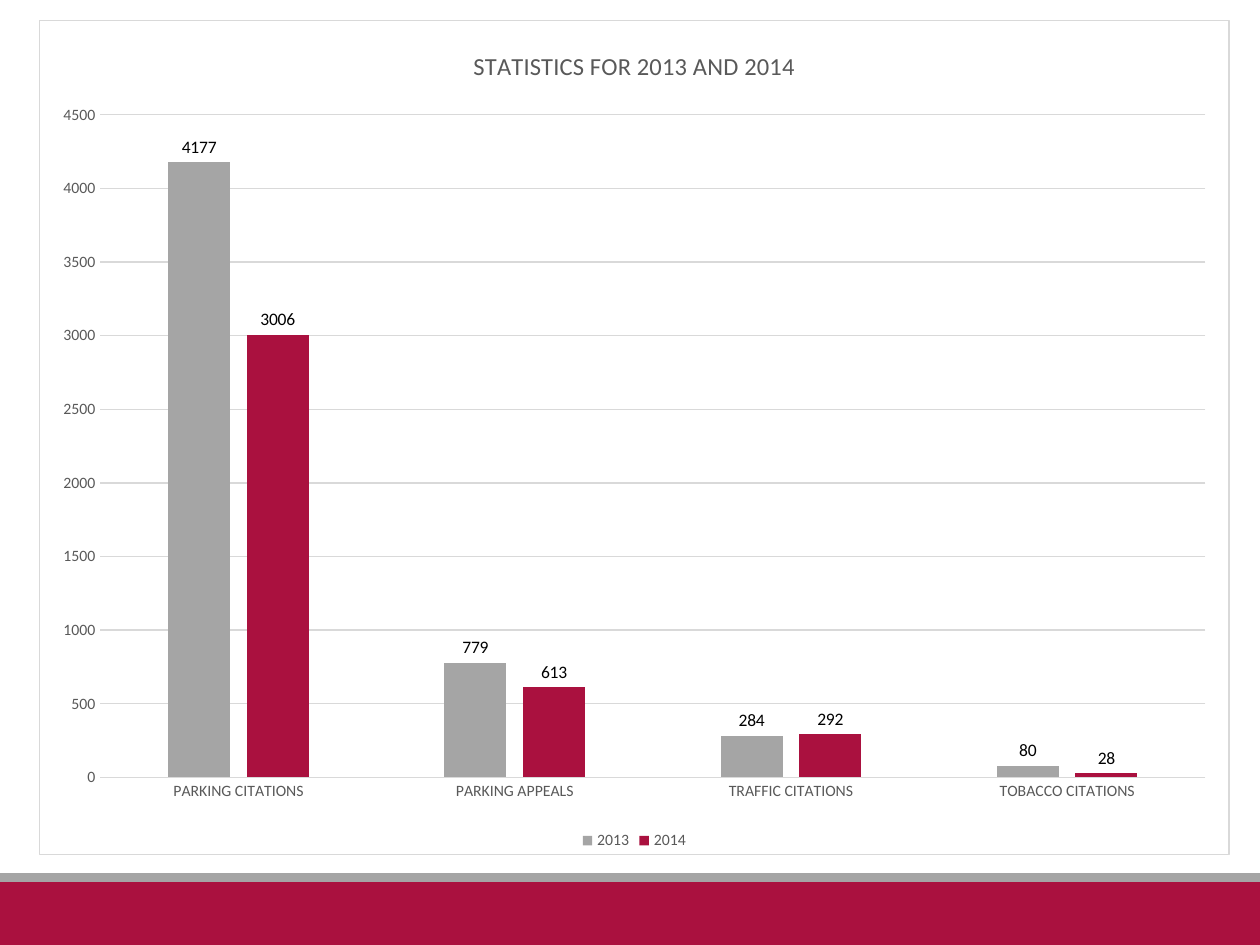
from dataclasses import dataclass

from lxml import etree
from pptx import Presentation
from pptx import util as u
from pptx.chart import data as cd
from pptx.dml import color as col
from pptx.enum import chart as ec
from pptx.enum import shapes as es
from pptx.oxml import ns


@dataclass(frozen=True)
class Theme:
    font: str = "Calibri"
    red: str = "AA113F"
    gray: str = "A5A5A5"
    rule: str = "D9D9D9"
    text: str = "595959"
    black: str = "000000"
    white: str = "FFFFFF"
    title: float = 14
    label: float = 10
    small: float = 9
    line: float = 0.75


T = Theme()
TITLE = "STATISTICS FOR 2013 AND 2014"
CATS = ["PARKING CITATIONS", "PARKING APPEALS",
        "TRAFFIC CITATIONS", "TOBACCO CITATIONS"]
SERIES = [("2013", [4177, 779, 284, 80], T.gray),
          ("2014", [3006, 613, 292, 28], T.red)]


def paint(fill, tone):
    fill.solid()
    fill.fore_color.rgb = col.RGBColor.from_string(tone)


def style(font, size, tone):
    font.name = T.font
    font.size = u.Pt(size)
    font.bold = False
    font.color.rgb = col.RGBColor.from_string(tone)


def rule(line):
    paint(line.fill, T.rule)
    line.width = u.Pt(T.line)


def add_band(slide, top, high, tone):
    """Draw a full-width footer band."""
    band = slide.shapes.add_shape(
        es.MSO_SHAPE.RECTANGLE, 0, u.Inches(top), u.Inches(10), u.Inches(high))
    band.shadow.inherit = False
    paint(band.fill, tone)
    band.line.fill.background()


def frame(chart):
    """Give the whole chart area a white fill and a thin border."""
    area = etree.fromstring(
        f'<c:spPr {ns.nsdecls("c", "a")}>'
        f'<a:solidFill><a:srgbClr val="{T.white}"/></a:solidFill>'
        f'<a:ln w="{int(u.Pt(T.line))}"><a:solidFill>'
        f'<a:srgbClr val="{T.rule}"/></a:solidFill></a:ln></c:spPr>')
    chart.element.find(ns.qn("c:chart")).addnext(area)


def style_axes(chart):
    for axis in (chart.category_axis, chart.value_axis):
        axis.major_tick_mark = axis.minor_tick_mark = ec.XL_TICK_MARK.NONE
        style(axis.tick_labels.font, T.small, T.text)
    rule(chart.category_axis.format.line)
    vals = chart.value_axis
    vals.minimum_scale, vals.maximum_scale, vals.major_unit = 0, 4500, 500
    vals.format.line.fill.background()
    rule(vals.major_gridlines.format.line)


def style_bars(plot):
    plot.gap_width, plot.overlap = 219, -27
    plot.vary_by_categories = False
    for bars, (_, _, tone) in zip(plot.series, SERIES):
        paint(bars.format.fill, tone)
        bars.invert_if_negative = False
        tags = bars.data_labels
        tags.show_value = True
        tags.position = ec.XL_LABEL_POSITION.OUTSIDE_END
        style(tags.font, T.label, T.black)


def add_stats(slide):
    data = cd.CategoryChartData()
    data.categories = CATS
    for name, vals, _ in SERIES:
        data.add_series(name, vals)
    box = [u.Inches(n) for n in (0.31, 0.16, 9.45, 6.63)]
    chart = slide.shapes.add_chart(
        ec.XL_CHART_TYPE.COLUMN_CLUSTERED, *box, data).chart
    style(chart.font, T.label, T.black)
    chart.has_title = True
    head = chart.chart_title.text_frame
    head.text = TITLE
    style(head.paragraphs[0].runs[0].font, T.title, T.text)
    chart.has_legend = True
    chart.legend.position = ec.XL_LEGEND_POSITION.BOTTOM
    chart.legend.include_in_layout = False
    style(chart.legend.font, T.small, T.text)
    style_axes(chart)
    style_bars(chart.plots[0])
    frame(chart)


def main():
    deck = Presentation()
    deck.slide_width, deck.slide_height = u.Inches(10), u.Inches(7.5)
    slide = deck.slides.add_slide(deck.slide_layouts[6])
    paint(slide.background.fill, T.white)
    add_band(slide, 7, 0.5, T.red)
    add_band(slide, 6.93, 0.07, T.gray)
    add_stats(slide)
    deck.save("out.pptx")


if __name__ == "__main__":
    main()
